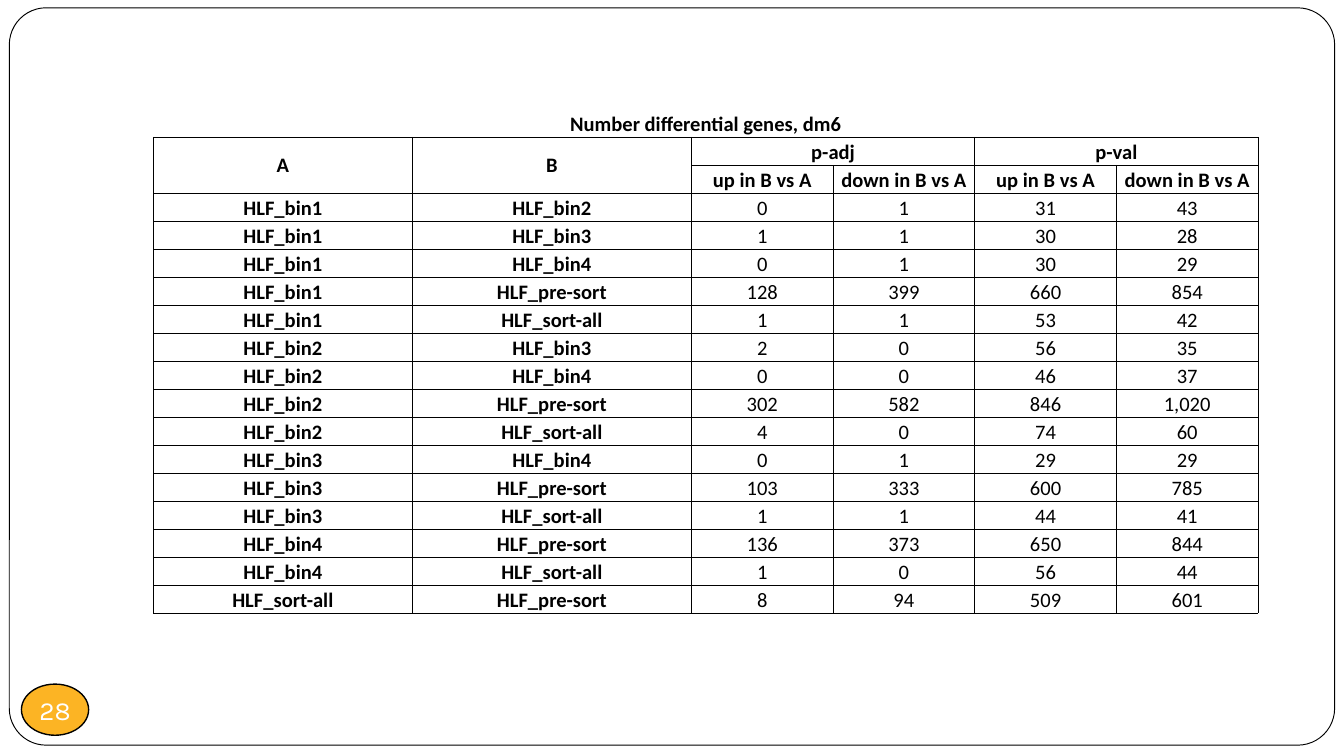
from lxml import etree
from pptx import Presentation
from pptx.dml.color import RGBColor
from pptx.enum.shapes import MSO_SHAPE
from pptx.enum.text import MSO_ANCHOR, PP_ALIGN
from pptx.oxml.ns import qn
from pptx.util import Pt

ROUNDED, OVAL = MSO_SHAPE.ROUNDED_RECTANGLE, MSO_SHAPE.OVAL
MIDDLE, BOTTOM = MSO_ANCHOR.MIDDLE, MSO_ANCHOR.BOTTOM
CENTER = PP_ALIGN.CENTER
BLACK, WHITE, ORANGE = "000000", "FFFFFF", "FCB424"

PAGE_NUMBER = "28"
HEADERS = [
    ["Number differential genes, dm6", "", "", "", "", ""],
    ["A", "B", "p-adj", "", "p-val", ""],
    ["", "", "up in B vs A", "down in B vs A", "up in B vs A", "down in B vs A"],
]
COMPARISONS = [
    ["HLF_bin1", "HLF_bin2", "0", "1", "31", "43"],
    ["HLF_bin1", "HLF_bin3", "1", "1", "30", "28"],
    ["HLF_bin1", "HLF_bin4", "0", "1", "30", "29"],
    ["HLF_bin1", "HLF_pre-sort", "128", "399", "660", "854"],
    ["HLF_bin1", "HLF_sort-all", "1", "1", "53", "42"],
    ["HLF_bin2", "HLF_bin3", "2", "0", "56", "35"],
    ["HLF_bin2", "HLF_bin4", "0", "0", "46", "37"],
    ["HLF_bin2", "HLF_pre-sort", "302", "582", "846", "1,020"],
    ["HLF_bin2", "HLF_sort-all", "4", "0", "74", "60"],
    ["HLF_bin3", "HLF_bin4", "0", "1", "29", "29"],
    ["HLF_bin3", "HLF_pre-sort", "103", "333", "600", "785"],
    ["HLF_bin3", "HLF_sort-all", "1", "1", "44", "41"],
    ["HLF_bin4", "HLF_pre-sort", "136", "373", "650", "844"],
    ["HLF_bin4", "HLF_sort-all", "1", "0", "56", "44"],
    ["HLF_sort-all", "HLF_pre-sort", "8", "94", "509", "601"],
]
MERGES = [((0, 0), (0, 5)), ((1, 0), (2, 0)), ((1, 1), (2, 1)),
          ((1, 2), (1, 3)), ((1, 4), (1, 5))]
COLUMN_WIDTHS = [138.75, 149.5] + [75.9] * 4
ROW_HEIGHT = 15
TABLE_LEFT, TABLE_TOP = 82.2, 58.5


def color(value):
    return RGBColor.from_string(value)


def style_paragraph(paragraph, font_name, size, text_color, bold=False):
    paragraph.alignment = CENTER
    font = paragraph.font
    font.name, font.size, font.bold = font_name, Pt(size), bold
    font.color.rgb = color(text_color)


def add_outlined_shape(slide, kind, left, top, width, height, fill, line_width):
    shape = slide.shapes.add_shape(kind, Pt(left), Pt(top), Pt(width), Pt(height))
    shape.shadow.inherit = False
    shape.fill.solid()
    shape.fill.fore_color.rgb = color(fill)
    shape.line.color.rgb = color(BLACK)
    shape.line.width = Pt(line_width)
    return shape


def set_borders(cell, visible_sides):
    properties = cell._tc.get_or_add_tcPr()
    for side in "LRTB":
        line = etree.SubElement(properties, qn(f"a:ln{side}"), w=str(Pt(0.5)))
        if side in visible_sides:
            fill = etree.SubElement(line, qn("a:solidFill"))
            etree.SubElement(fill, qn("a:srgbClr"), val=BLACK)
        else:
            etree.SubElement(line, qn("a:noFill"))


def add_gene_table(slide):
    rows = HEADERS + COMPARISONS
    frame = slide.shapes.add_table(
        len(rows), len(COLUMN_WIDTHS), Pt(TABLE_LEFT), Pt(TABLE_TOP),
        Pt(sum(COLUMN_WIDTHS)), Pt(ROW_HEIGHT * len(rows)))
    table = frame.table
    table.first_row = table.horz_banding = False
    for column, width in zip(table.columns, COLUMN_WIDTHS):
        column.width = Pt(width)
    for row_index, values in enumerate(rows):
        table.rows[row_index].height = Pt(ROW_HEIGHT)
        for column_index, value in enumerate(values):
            cell = table.cell(row_index, column_index)
            cell.text = value
            cell.margin_left = cell.margin_right = cell.margin_top = Pt(0.7)
            cell.margin_bottom = 0
            is_key = row_index == 1 and column_index < 2
            cell.vertical_anchor = MIDDLE if is_key else BOTTOM
            is_bold = row_index < len(HEADERS) or column_index < 2
            style_paragraph(cell.text_frame.paragraphs[0], "Calibri", 11, BLACK, is_bold)
            set_borders(cell, "LRTB" if row_index else "B")
            cell.fill.background()
    for first, last in MERGES:
        table.cell(*first).merge(table.cell(*last))


def add_page_number(slide):
    badge = add_outlined_shape(slide, OVAL, 11.5, 366.5, 36, 27.4, ORANGE, 0.75)
    frame = badge.text_frame
    frame.word_wrap = False
    frame.vertical_anchor = MIDDLE
    frame.margin_left = frame.margin_right = frame.margin_top = frame.margin_bottom = 0
    frame.text = PAGE_NUMBER
    style_paragraph(frame.paragraphs[0], "Karla", 14, WHITE)


def main():
    presentation = Presentation()
    presentation.slide_width, presentation.slide_height = Pt(720), Pt(405)
    slide = presentation.slides.add_slide(presentation.slide_layouts[6])
    border = add_outlined_shape(slide, ROUNDED, 5, 4.2, 710, 395, WHITE, 0.5)
    border.adjustments[0] = 0.05
    add_page_number(slide)
    add_gene_table(slide)
    presentation.save("out.pptx")


if __name__ == "__main__":
    main()
